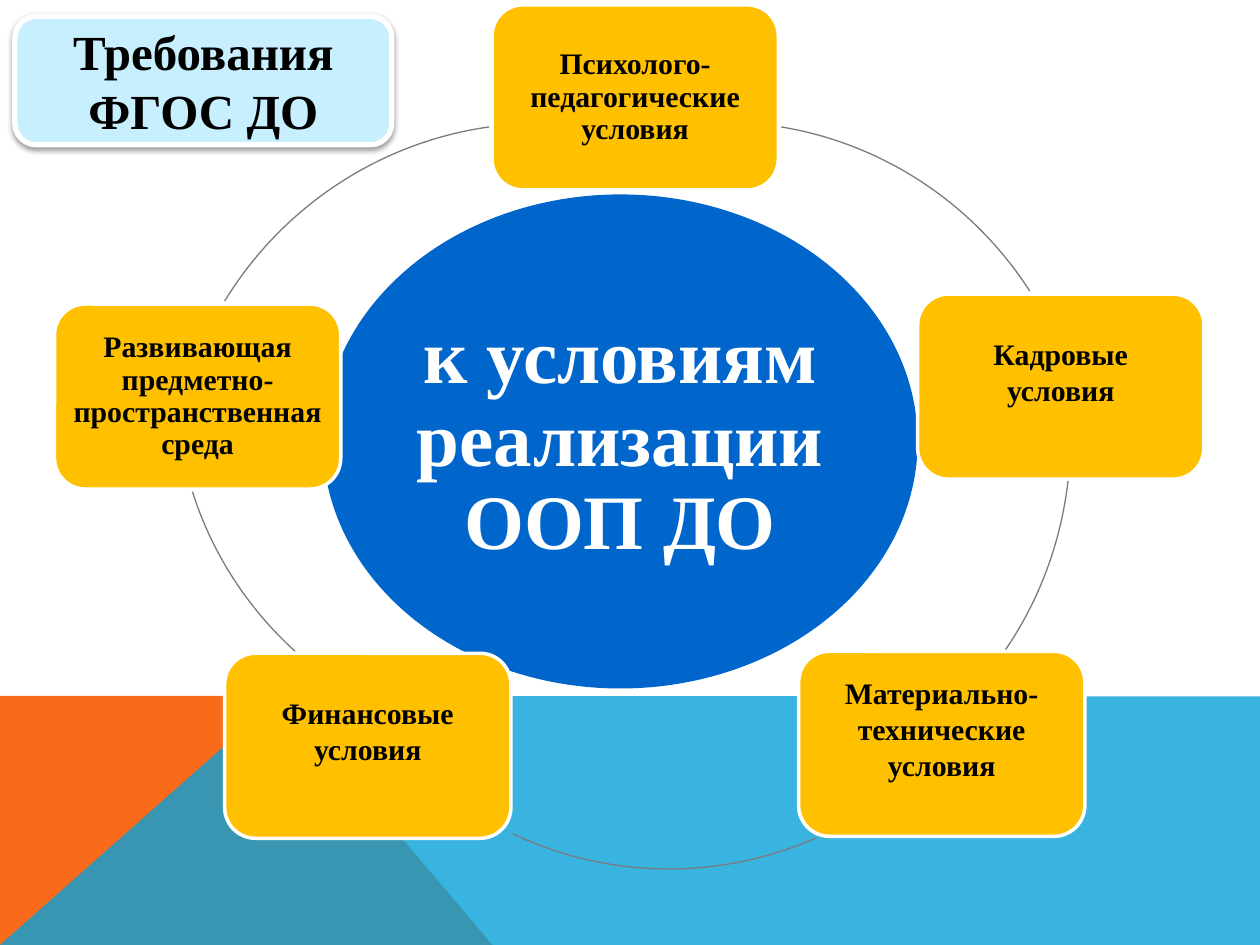
from dataclasses import dataclass

import pptx
import pptx.dml.color
import pptx.enum.shapes
import pptx.enum.text
import pptx.oxml
import pptx.oxml.ns
import pptx.util

Cm = pptx.util.Cm
Pt = pptx.util.Pt
qn = pptx.oxml.ns.qn
Shapes = pptx.enum.shapes.MSO_SHAPE
Point = tuple[float, float]

FONT = "Times New Roman"
CARD_WIDTH, CARD_HEIGHT = 5.77, 3.73
RING_SIZE = 14.94


@dataclass
class Card:
    """A condition on the ring and the arc that follows it (cm)."""
    left: float
    top: float
    lines: list[str]
    ring: Point  # top left corner of the arc's full circle
    curve: list[Point]  # start, two handles, end
    spacing: float = 1.0
    lift: float = 0.62  # extra bottom inset that raises the text


CARDS = [
    Card(9.92, 0.1, ["Психолого-педагогические условия"], (7.01, 2.44),
         [(15.75, 2.56), (17.81, 2.9), (19.63, 4.11), (20.76, 5.87)], 0.9, 0),
    Card(18.5, 5.93, ["Кадровые", "условия"], (6.63, 1.4),
         [(21.53, 9.7), (21.39, 10.92), (20.96, 12.09), (20.27, 13.1)]),
    Card(16.1, 13.13, ["Материально-технические", "условия"], (6.02, 2.57),
         [(16.46, 16.89), (14.5, 17.75), (12.27, 17.73), (10.34, 16.81)]),
    Card(4.53, 13.17, ["Финансовые", "условия"], (3.53, 0.15),
         [(5.95, 13.13), (5, 12.27), (4.27, 11.15), (3.88, 9.91)]),
    Card(1.1, 6.13, ["Развивающая предметно-пространственная среда"], (3.45, 2.49),
         [(4.53, 6.07), (5.69, 4.17), (7.65, 2.87), (9.86, 2.56)], 0.9, 0),
]


def color(value: str) -> pptx.dml.color.RGBColor:
    return pptx.dml.color.RGBColor.from_string(value)


def paint(shape, fill: str | None = None, line: str | None = None,
          width: float = 1) -> None:
    shape.shadow.inherit = False
    if fill:
        shape.fill.solid()
        shape.fill.fore_color.rgb = color(fill)
    else:
        shape.fill.background()
    if line:
        shape.line.color.rgb = color(line)
        shape.line.width = Pt(width)
    else:
        shape.line.fill.background()


def add_effect(parent, xml: str) -> None:
    namespace = pptx.oxml.ns.nsdecls("a")
    parent.append(pptx.oxml.parse_xml(xml.replace(" ", f" {namespace} ", 1)))


def write(shape, lines: list[str], *, size: float, ink: str = "000000",
          spacing: float = 1.0, inset: float = 0.25, side: float = 0.25,
          lift: float = 0) -> None:
    frame = shape.text_frame
    frame.word_wrap = True
    frame.vertical_anchor = pptx.enum.text.MSO_ANCHOR.MIDDLE
    frame.margin_left = frame.margin_right = Cm(side)
    frame.margin_top = Cm(inset)
    frame.margin_bottom = Cm(inset + lift)
    for index, line in enumerate(lines):
        para = frame.paragraphs[0] if index == 0 else frame.add_paragraph()
        para.alignment = pptx.enum.text.PP_ALIGN.CENTER
        para.line_spacing = spacing
        span = para.add_run()
        span.text = line
        span.font.name = FONT
        span.font.size = Pt(size)
        span.font.bold = True
        span.font.color.rgb = color(ink)


def add_box(page, kind, left: float, top: float, width: float, height: float):
    return page.shapes.add_shape(kind, Cm(left), Cm(top), Cm(width), Cm(height))


def add_outline(page, points: list[Point], close: bool = True):
    start, *rest = [(Cm(x), Cm(y)) for x, y in points]
    builder = page.shapes.build_freeform(*start)
    builder.add_line_segments(rest, close=close)
    return builder.convert_to_shape()


def add_arc(page, ring: Point, curve: list[Point]):
    """One cubic curve, framed by the full circle it belongs to."""
    arc = add_outline(page, curve, close=False)
    left, top, size = Cm(ring[0]), Cm(ring[1]), Cm(RING_SIZE)
    shift_x, shift_y = arc.left - left, arc.top - top
    arc.left, arc.top, arc.width, arc.height = left, top, size, size

    path = next(arc._element.iter(qn("a:path")))
    path.set("w", str(size))
    path.set("h", str(size))
    for point in path.iter(qn("a:pt")):
        point.set("x", str(int(point.get("x")) + shift_x))
        point.set("y", str(int(point.get("y")) + shift_y))

    # Join the three segments into one Bezier segment
    add_effect(path, "<a:cubicBezTo />")
    for segment in path.findall(qn("a:lnTo")):
        path[-1].append(segment[0])
        path.remove(segment)
    return arc


def add_card(page, card: Card) -> None:
    box = add_box(page, Shapes.ROUNDED_RECTANGLE, card.left, card.top,
                  CARD_WIDTH, CARD_HEIGHT)
    paint(box, "FFC000", "FFFFFF", 2)
    write(box, card.lines, size=17, spacing=card.spacing,
          inset=0.18, side=0.15, lift=card.lift)
    paint(add_arc(page, card.ring, card.curve), line="797B7E", width=0.75)


def main() -> None:
    deck = pptx.Presentation()
    deck.slide_width, deck.slide_height = Cm(25.4), Cm(19.05)
    page = deck.slides.add_slide(deck.slide_layouts[6])

    # Bottom decoration
    orange = add_outline(page, [(0, 19.05), (0, 14.03), (5.66, 14.03), (9.93, 19.05)])
    paint(orange, "F96A1B")
    blue = add_outline(page, [(0, 19.05), (5.66, 14.03), (25.4, 14.04), (25.4, 19.05)])
    paint(blue, "08A1D9")
    add_effect(blue.fill.fore_color._xFill[0], '<a:alpha val="80000"/>')

    # Centre
    centre = add_box(page, Shapes.OVAL, 6.51, 3.92, 11.99, 9.96)
    paint(centre, "0066CC")
    write(centre, ["к условиям реализации ООП ДО"], size=44, ink="FFFFFF",
          spacing=0.9, inset=0.05, side=0.05)

    # Ring of conditions
    for card in CARDS:
        add_card(page, card)

    # Title with a soft shadow
    title = add_box(page, Shapes.ROUNDED_RECTANGLE, 0.3, 0.33, 7.6, 2.59)
    paint(title, "C8EFFD", "FFFFFF", 3)
    write(title, ["Требования ФГОС ДО"], size=28, inset=0.13)
    effects = title._element.spPr.find(qn("a:effectLst"))
    add_effect(effects, '<a:outerShdw blurRad="39400" dist="20300" dir="5400000" '
                        'rotWithShape="0"><a:srgbClr val="000000">'
                        '<a:alpha val="38000"/></a:srgbClr></a:outerShdw>')

    deck.save("out.pptx")


if __name__ == "__main__":
    main()
